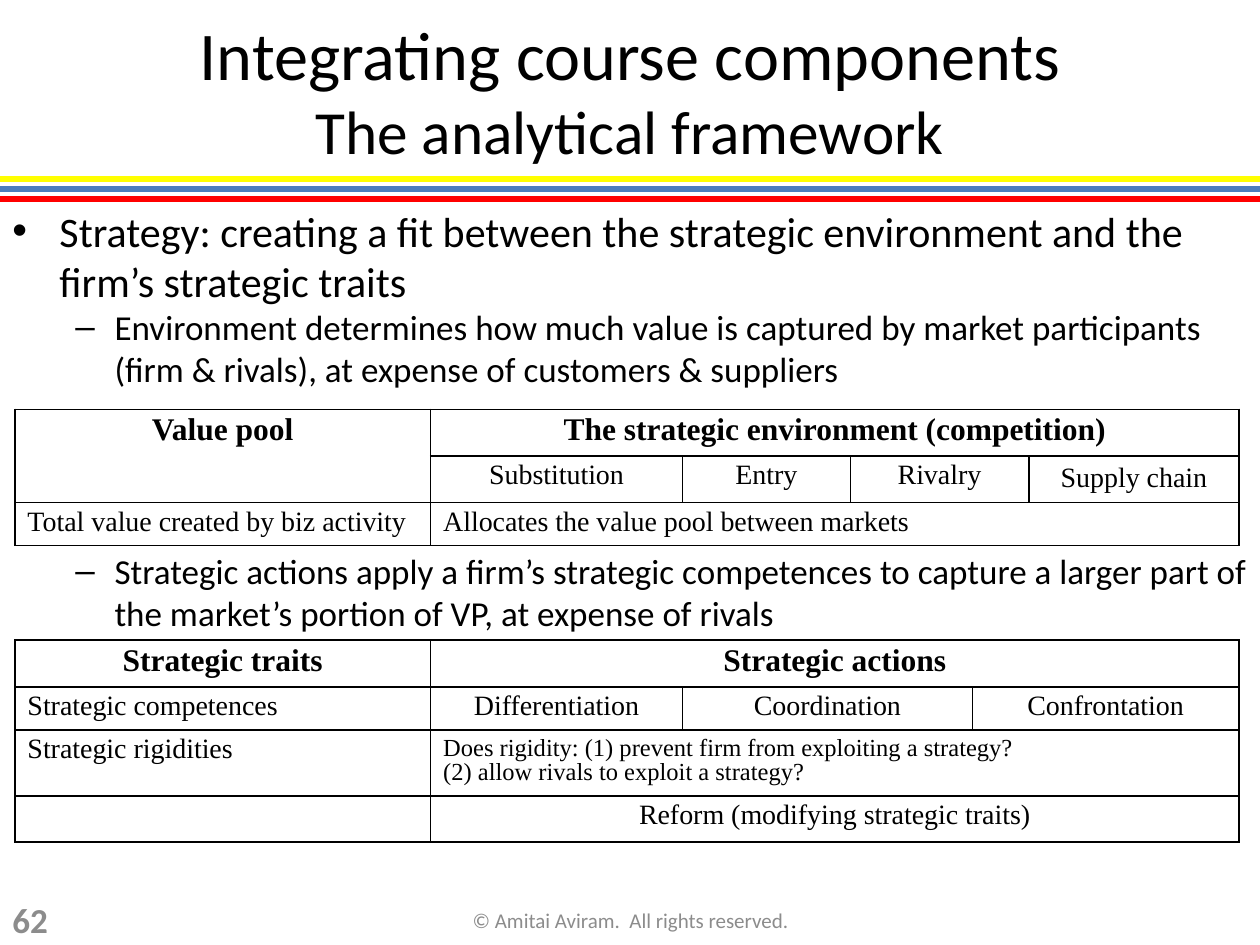
from dataclasses import dataclass

from lxml import etree
from pptx import Presentation
from pptx.dml.color import RGBColor
from pptx.enum.shapes import MSO_CONNECTOR
from pptx.enum.text import MSO_ANCHOR, PP_ALIGN
from pptx.oxml.ns import qn
from pptx.util import Cm, Pt

STRAIGHT = MSO_CONNECTOR.STRAIGHT
TOP, MIDDLE = MSO_ANCHOR.TOP, MSO_ANCHOR.MIDDLE
LEFT, CENTER, JUSTIFY = PP_ALIGN.LEFT, PP_ALIGN.CENTER, PP_ALIGN.JUSTIFY


@dataclass
class Theme:
    sans: str = "Calibri"
    serif: str = "Times New Roman"
    black: str = "000000"
    gray: str = "8C8C8C"
    yellow: str = "FFFF00"
    blue: str = "4B7EBC"
    red: str = "FF0000"
    title: int = 39
    subtitle: int = 35
    bullet: int = 24
    dash: int = 20
    number: int = 20
    footer: int = 12
    head: int = 18
    cell: int = 16
    note: int = 14


theme = Theme()


def format_runs(p, size, name=theme.sans, color=theme.black, bold=False):
    for r in p.runs:
        r.font.size, r.font.name, r.font.bold = Pt(size), name, bold
        r.font.color.rgb = RGBColor.from_string(color)


def add_text(s, box, text, align=LEFT, anchor=MIDDLE):
    tf = s.shapes.add_textbox(*(Cm(v) for v in box)).text_frame
    tf.word_wrap = True
    tf.vertical_anchor = anchor
    tf.text = text
    for p in tf.paragraphs:
        p.alignment = align
    return tf


prs = Presentation()
prs.slide_width, prs.slide_height = Cm(25.4), Cm(19.05)
s = prs.slides.add_slide(prs.slide_layouts[6])

for i, color in enumerate([theme.yellow, theme.blue, theme.red]):
    y = Cm(3.61 + 0.2 * i)
    stripe = s.shapes.add_connector(STRAIGHT, 0, y, prs.slide_width, y)
    stripe.line.color.rgb = RGBColor.from_string(color)
    stripe.line.width = Pt(3)
    etree.SubElement(stripe._element.spPr, qn("a:effectLst"))

tf = add_text(s, (0, 0, 25.4, 3.61),
              "Integrating course components\vThe analytical framework", CENTER)
p = tf.paragraphs[0]
format_runs(p, theme.title)
p.runs[1].font.size = Pt(theme.subtitle)

body = [
    ("Strategy: creating a fit between the strategic environment and the firm’s strategic traits",
     "•", theme.bullet, 0.95, 0.95, 0),
    ("Environment determines how much value is captured by market participants "
     "(firm & rivals), at expense of customers & suppliers",
     "–", theme.dash, 2.06, 0.79, 0),
    ("Strategic actions apply a firm’s strategic competences to capture a larger part of "
     "the market’s portion of VP, at expense of rivals",
     "–", theme.dash, 2.06, 0.79, 91),
]
tf = add_text(s, (0, 4.01, 25.4, 14.4), "\n".join(b[0] for b in body), anchor=TOP)
for p, (text, mark, size, margin, hang, before) in zip(tf.paragraphs, body):
    format_runs(p, size)
    p.space_before = Pt(before)
    pPr = p._p.get_or_add_pPr()
    pPr.set("marL", str(Cm(margin)))
    pPr.set("indent", str(-Cm(hang)))
    etree.SubElement(pPr, qn("a:buFont"), typeface="Arial")
    etree.SubElement(pPr, qn("a:buChar"), char=mark)

tf = add_text(s, (0, 18.03, 1.7, 1.02), "62", JUSTIFY)
format_runs(tf.paragraphs[0], theme.number, color=theme.gray, bold=True)
tf = add_text(s, (8.69, 18.03, 8.05, 1.02),
              "© Amitai Aviram.  All rights reserved.", CENTER)
format_runs(tf.paragraphs[0], theme.footer, color=theme.gray)

head, cell, note = theme.head, theme.cell, theme.note
tables = [
    (8.25, [8.38, 5.08, 3.38, 3.6, 4.24], [0.89, 0.89, 0.83],
     [(0, 0, 1, 0), (0, 1, 0, 4), (2, 1, 2, 4)],
     {(0, 0): ("Value pool", head, CENTER),
      (0, 1): ("The strategic environment (competition)", head, CENTER),
      (1, 1): ("Substitution", cell, CENTER),
      (1, 2): ("Entry", cell, CENTER),
      (1, 3): ("Rivalry", cell, CENTER),
      (1, 4): ("Supply chain", cell, CENTER),
      (2, 0): ("Total value created by biz activity", cell, LEFT),
      (2, 1): ("Allocates the value pool between markets", cell, LEFT)}),
    (12.9, [8.38, 5.08, 5.84, 5.38], [0.95, 0.87, 1.23, 0.89],
     [(0, 1, 0, 3), (2, 1, 2, 3), (3, 1, 3, 3)],
     {(0, 0): ("Strategic traits", head, CENTER),
      (0, 1): ("Strategic actions", head, CENTER),
      (1, 0): ("Strategic competences", cell, LEFT),
      (1, 1): ("Differentiation", cell, CENTER),
      (1, 2): ("Coordination", cell, CENTER),
      (1, 3): ("Confrontation", cell, CENTER),
      (2, 0): ("Strategic rigidities", cell, LEFT),
      (2, 1): ("Does rigidity: (1) prevent firm from exploiting a strategy?\v"
               "(2) allow rivals to exploit a strategy?", note, LEFT),
      (3, 1): ("Reform (modifying strategic traits)", cell, CENTER)}),
]
for top, widths, heights, merges, texts in tables:
    table = s.shapes.add_table(len(heights), len(widths), Cm(0.3), Cm(top),
                               Cm(sum(widths)), Cm(sum(heights))).table
    for column, width in zip(table.columns, widths):
        column.width = Cm(width)
    for row, height in zip(table.rows, heights):
        row.height = Cm(height)
    for r1, c1, r2, c2 in merges:
        table.cell(r1, c1).merge(table.cell(r2, c2))
    for i in range(len(heights)):
        for j in range(len(widths)):
            c = table.cell(i, j)
            tcPr = c._tc.get_or_add_tcPr()
            for side in ("a:lnL", "a:lnR", "a:lnT", "a:lnB"):
                ln = etree.SubElement(tcPr, qn(side), w=str(Pt(1)))
                fill = etree.SubElement(ln, qn("a:solidFill"))
                etree.SubElement(fill, qn("a:srgbClr"), val=theme.black)
            c.fill.background()
            text, size, align = texts.get((i, j), ("", cell, LEFT))
            p = c.text_frame.paragraphs[0]
            p.text = text
            p.alignment = align
            p.line_spacing = 0.9
            format_runs(p, size, theme.serif, bold=size == head)
            if not text:
                etree.SubElement(p._p, qn("a:endParaRPr"), sz=str(size * 100))
            if text == "Supply chain":
                p.line_spacing = 1.0
                p.space_before = Pt(2)

prs.save("out.pptx")
